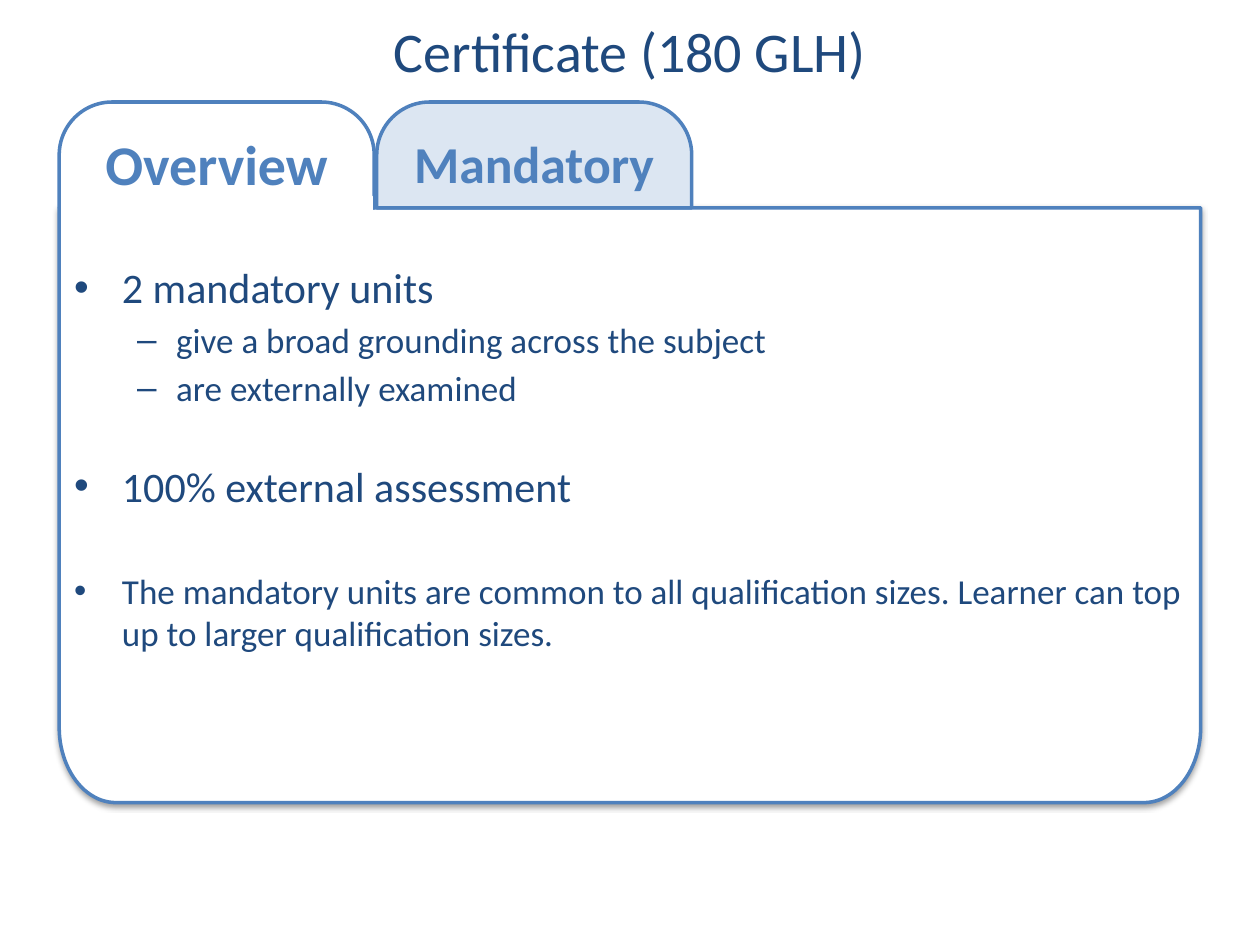
from math import cos, pi, sin

from lxml.etree import SubElement
from pptx import Presentation
from pptx.dml.color import RGBColor
from pptx.enum.shapes import MSO_SHAPE
from pptx.enum.text import MSO_ANCHOR, PP_ALIGN
from pptx.oxml.ns import qn
from pptx.util import Inches, Pt

NAVY = RGBColor(0x1F, 0x49, 0x7D)
BLUE = RGBColor(0x4F, 0x81, 0xBD)
PALE_BLUE = RGBColor(0xDC, 0xE6, 0xF2)
WHITE = RGBColor(0xFF, 0xFF, 0xFF)
FONT = "Calibri"

LEFT, PANEL_TOP, PANEL_WIDTH, PANEL_HEIGHT = 0.47, 1.65, 9.06, 4.72
TAB_TOP, TAB_WIDTH, TAB_HEIGHT, TAB_STEP = 0.81, 2.5, 0.84, 2.52

# bullet, left margin, hanging indent
LEVELS = [("•", 0.38, 0.38), ("–", 0.81, 0.31)]
# text, level, size, space before
BULLETS = [
    ("2 mandatory units", 0, 24, 0),
    ("give a broad grounding across the subject", 1, 20, 3.5),
    ("are externally examined", 1, 20, 3.5),
    ("100% external assessment", 0, 24, 29.5),
    ("The mandatory units are common to all qualification sizes. "
     "Learner can top up to larger qualification sizes.", 0, 20, 33.5),
]


def write(paragraph, text, size, color=NAVY, bold=False,
          align=PP_ALIGN.LEFT, space_before=0):
    paragraph.text = text
    paragraph.alignment = align
    paragraph.space_before = Pt(space_before)
    font = paragraph.runs[0].font
    font.name, font.size, font.bold = FONT, Pt(size), bold
    font.color.rgb = color


def paint(shape, fill, line):
    shape.shadow.inherit = False
    shape.fill.solid()
    shape.fill.fore_color.rgb = fill
    shape.line.color.rgb = line
    shape.line.width = Pt(2)


def add_text_frame(slide, left, top, width, height):
    box = slide.shapes.add_textbox(
        Inches(left), Inches(top), Inches(width), Inches(height))
    box.text_frame.word_wrap = True
    return box.text_frame


def add_title(slide, left, top, width, height):
    frame = add_text_frame(slide, left, top, width, height)
    frame.vertical_anchor = MSO_ANCHOR.MIDDLE
    write(frame.paragraphs[0], "Certificate (180 GLH)", 32,
          align=PP_ALIGN.CENTER)


def add_soft_shadow(shape):
    effects = shape._element.spPr.find(qn("a:effectLst"))
    shadow = SubElement(effects, qn("a:outerShdw"), blurRad=str(Pt(3.1)),
                        dist=str(Pt(1.6)), dir="5400000", rotWithShape="0")
    color = SubElement(shadow, qn("a:srgbClr"), val="000000")
    SubElement(color, qn("a:alpha"), val="38000")


def add_panel(slide, left, top, width, height):
    """Draw a box with square top corners and elliptical bottom corners."""
    radius_x, radius_y, steps = 0.45, 0.6, 24
    right, bottom = left + width, top + height
    angles = [pi / 2 * step / steps for step in range(steps + 1)]
    right_corner = [(right - radius_x * (1 - cos(angle)),
                     bottom - radius_y * (1 - sin(angle))) for angle in angles]
    left_corner = [(left + right - x, y) for x, y in reversed(right_corner)]
    builder = slide.shapes.build_freeform(
        Inches(left), Inches(top), scale=1.0)
    builder.add_line_segments(
        [(Inches(x), Inches(y))
         for x, y in [(right, top)] + right_corner + left_corner], close=True)
    panel = builder.convert_to_shape()
    paint(panel, WHITE, BLUE)
    add_soft_shadow(panel)


def add_tab(slide, left, top, width, height, text, size, fill):
    tab = slide.shapes.add_shape(
        MSO_SHAPE.ROUND_2_SAME_RECTANGLE,
        Inches(left), Inches(top), Inches(width), Inches(height))
    tab.adjustments[0] = 0.5
    paint(tab, fill, BLUE)
    tab.text_frame.vertical_anchor = MSO_ANCHOR.MIDDLE
    write(tab.text_frame.paragraphs[0], text, size, color=BLUE, bold=True,
          align=PP_ALIGN.CENTER)


def add_tab_opening(slide, left, top, width, height):
    """Hide the line between the active tab and the panel."""
    opening = slide.shapes.add_shape(
        MSO_SHAPE.RECTANGLE,
        Inches(left), Inches(top), Inches(width), Inches(height))
    paint(opening, WHITE, WHITE)


def add_bullets(slide, left, top, width, height):
    frame = add_text_frame(slide, left, top, width, height)
    for index, (text, level, size, space_before) in enumerate(BULLETS):
        paragraph = frame.add_paragraph() if index else frame.paragraphs[0]
        bullet, margin, hanging = LEVELS[level]
        paragraph.level = level
        write(paragraph, text, size, space_before=space_before)
        properties = paragraph._p.get_or_add_pPr()
        properties.set("marL", str(Inches(margin)))
        properties.set("indent", str(-Inches(hanging)))
        SubElement(properties, qn("a:buFont"), typeface="Arial")
        SubElement(properties, qn("a:buChar"), char=bullet)


def main():
    presentation = Presentation()
    presentation.slide_width, presentation.slide_height = Inches(10), Inches(7.5)
    slide = presentation.slides.add_slide(presentation.slide_layouts[6])
    add_title(slide, 0, 0, 10, TAB_TOP - 0.02)
    add_panel(slide, LEFT, PANEL_TOP, PANEL_WIDTH, PANEL_HEIGHT)
    add_tab(slide, LEFT + TAB_STEP, TAB_TOP, TAB_WIDTH, TAB_HEIGHT,
            "Mandatory", 29.6, PALE_BLUE)
    add_tab(slide, LEFT, TAB_TOP, TAB_WIDTH, TAB_HEIGHT, "Overview", 32, WHITE)
    add_bullets(slide, LEFT + 0.02, 2.03, PANEL_WIDTH, 3.99)
    add_tab_opening(slide, LEFT + 0.03, PANEL_TOP - 0.09, TAB_WIDTH - 0.05, 0.17)
    presentation.save("out.pptx")


if __name__ == "__main__":
    main()
